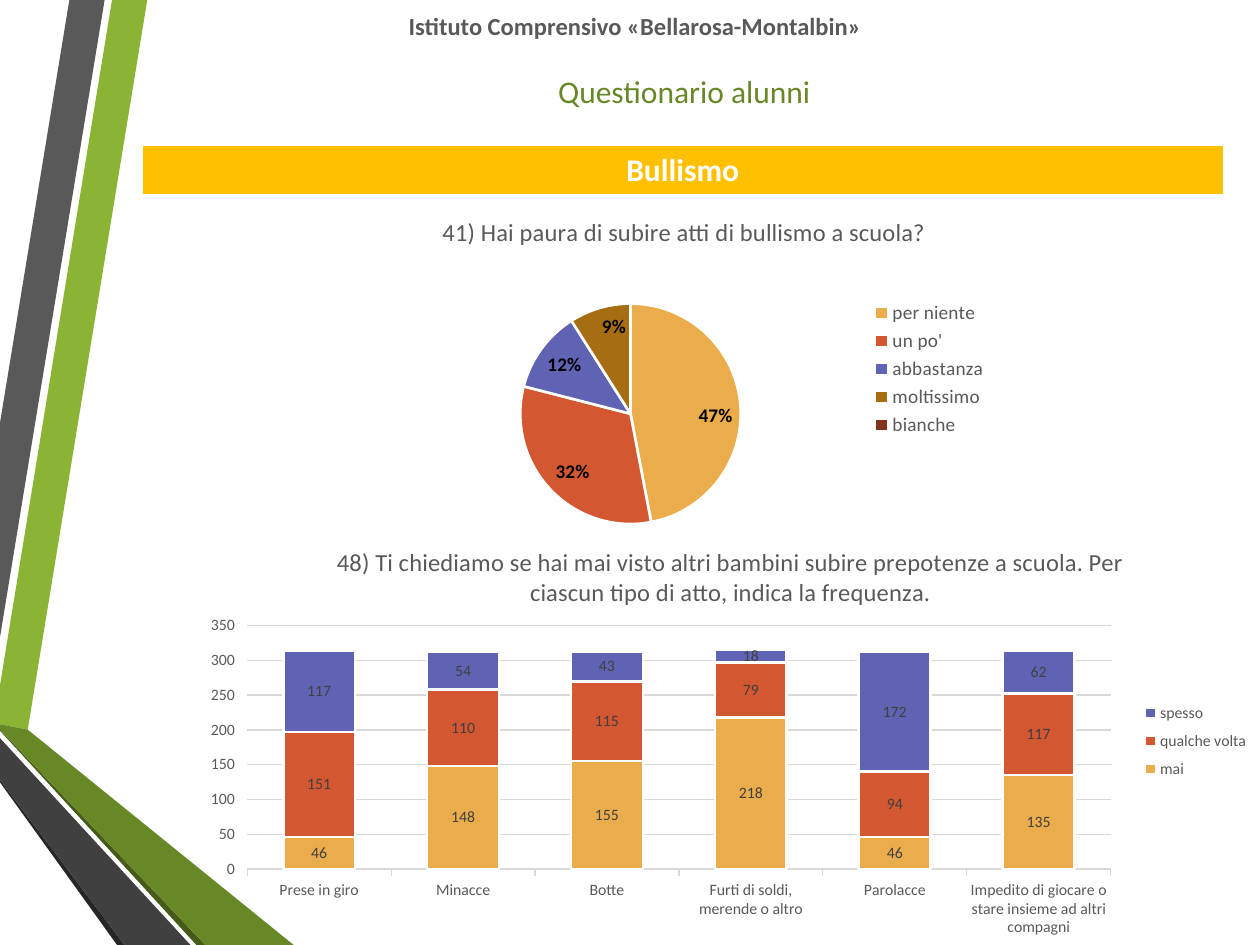
from dataclasses import dataclass

from lxml.etree import SubElement
from pptx import Presentation
from pptx.chart.data import CategoryChartData
from pptx.dml.color import RGBColor
from pptx.enum.chart import XL_CHART_TYPE, XL_LABEL_POSITION, XL_LEGEND_POSITION, XL_TICK_MARK
from pptx.enum.text import MSO_ANCHOR, PP_ALIGN
from pptx.oxml.ns import qn
from pptx.util import Cm, Pt


@dataclass(frozen=True)
class Theme:
    font: str = "Calibri"
    white: str = "FFFFFF"
    black: str = "000000"
    gray: str = "595959"
    dark_gray: str = "404040"
    near_black: str = "262626"
    grid: str = "D9D9D9"
    lime: str = "8BB434"
    green: str = "688727"
    deep_green: str = "465A1A"
    banner: str = "FFC000"
    series: tuple = ("EBAC4B", "D35731", "6063B4", "A76D13", "81331B")
    heading: int = 18
    title: int = 14
    legend: int = 11
    small: int = 9


THEME = Theme()

RIBBONS = [
    (THEME.lime, [(0, 13.82), (0, 14.6), (0.56, 14.71), (2.97, 0), (2.26, 0)]),
    (THEME.gray, [(2.11, 0), (1.4, 0), (0, 8.53), (0, 12.85)]),
    (THEME.near_black, [(0, 15.72), (0, 15.77), (2.36, 19.05), (2.51, 19.05)]),
    (THEME.deep_green, [(0, 14.71), (0, 14.73), (3.96, 19.05), (4.14, 19.05)]),
    (THEME.green, [(0, 14.71), (4.14, 19.05), (5.92, 19.05), (0.56, 14.71), (0, 14.6)]),
    (THEME.dark_gray, [(0, 15.72), (2.51, 19.05), (3.84, 19.05), (0, 14.88)]),
]

FEAR_QUESTION = "41) Hai paura di subire atti di bullismo a scuola?"
FEAR_ANSWERS = {"per niente": 47, "un po'": 32, "abbastanza": 12, "moltissimo": 9, "bianche": 0}

ACTS_QUESTION = (
    "48) Ti chiediamo se hai mai visto altri bambini subire prepotenze a scuola. "
    "Per ciascun tipo di atto, indica la frequenza."
)
ACTS = [
    "Prese in giro", "Minacce", "Botte", "Furti di soldi, merende o altro",
    "Parolacce", "Impedito di giocare o stare insieme ad altri compagni",
]
FREQUENCIES = {
    "mai": (46, 148, 155, 218, 46, 135),
    "qualche volta": (151, 110, 115, 79, 94, 117),
    "spesso": (117, 54, 43, 18, 172, 62),
}


def rgb(color):
    return RGBColor.from_string(color)


def set_font(font, size, color, bold=False):
    font.name = THEME.font
    font.size = Pt(size)
    font.bold = bold
    font.color.rgb = rgb(color)


def set_fill(fill, color):
    fill.solid()
    fill.fore_color.rgb = rgb(color)


def set_line(line, color, width):
    line.color.rgb = rgb(color)
    line.width = Pt(width)


def add_ribbon(s, color, points):
    start, *rest = [(Cm(x), Cm(y)) for x, y in points]
    builder = s.shapes.build_freeform(*start)
    builder.add_line_segments(rest, close=True)
    sp = builder.convert_to_shape()
    sp.shadow.inherit = False
    set_fill(sp.fill, color)
    sp.line.fill.background()


def write_centered(tf, text, size, color, bold=False):
    p = tf.paragraphs[0]
    p.text = text
    p.alignment = PP_ALIGN.CENTER
    set_font(p.font, size, color, bold)


def add_text(s, box, text, size, color, bold=False):
    tf = s.shapes.add_textbox(*map(Cm, box)).text_frame
    tf.word_wrap = True
    write_centered(tf, text, size, color, bold)


def add_banner(s, box, text):
    table = s.shapes.add_table(1, 1, *map(Cm, box)).table
    cell = table.cell(0, 0)
    cell.vertical_anchor = MSO_ANCHOR.MIDDLE
    write_centered(cell.text_frame, text, THEME.heading, THEME.white, True)
    tc_pr = cell._tc.get_or_add_tcPr()
    for side, width in (("L", 1), ("R", 1), ("T", 1), ("B", 3)):
        ln = SubElement(tc_pr, qn(f"a:ln{side}"), w=str(Pt(width)))
        SubElement(SubElement(ln, qn("a:solidFill")), qn("a:srgbClr"), val=THEME.white)
    set_fill(cell.fill, THEME.banner)


def place(element, x, y, w=None, h=None, inner=False):
    for old in element.findall(qn("c:layout")):
        element.remove(old)
    layout = element.makeelement(qn("c:layout"), {})
    manual = SubElement(layout, qn("c:manualLayout"))
    if inner:
        SubElement(manual, qn("c:layoutTarget"), val="inner")
    for mode in ("xMode", "yMode"):
        SubElement(manual, qn(f"c:{mode}"), val="edge")
    for name, value in zip("xywh", (x, y, w, h)):
        if value is not None:
            SubElement(manual, qn(f"c:{name}"), val=str(value))
    first = element.find(qn("c:tx"))
    if first is None:
        first = element.find(qn("c:legendPos"))
    if first is None:
        element.insert(0, layout)
    else:
        first.addnext(layout)


def add_chart(s, kind, box, title, data, legend_size, plot_area, legend_area):
    chart = s.shapes.add_chart(kind, *map(Cm, box), data).chart
    set_font(chart.font, 10, THEME.black)
    chart.has_title = True
    write_centered(chart.chart_title.text_frame, title, THEME.title, THEME.gray)
    chart.has_legend = True
    chart.legend.position = XL_LEGEND_POSITION.RIGHT
    chart.legend.include_in_layout = False
    set_font(chart.legend.font, legend_size, THEME.gray)
    place(chart.legend._element, *legend_area)
    place(chart._chartSpace.chart.plotArea, *plot_area, inner=True)
    return chart


def add_fear_pie(s):
    data = CategoryChartData()
    data.categories = list(FEAR_ANSWERS)
    data.add_series(FEAR_QUESTION, list(FEAR_ANSWERS.values()))
    chart = add_chart(s, XL_CHART_TYPE.PIE, (7.44, 3.96, 12.7, 6.96), FEAR_QUESTION, data,
                      THEME.legend, (0.24, 0.31, 0.35, 0.64), (0.79, 0.29, 0.2, 0.42))
    plot = chart.plots[0]
    plot.vary_by_categories = True
    for i, color in enumerate(THEME.series):
        fmt = plot.series[0].points[i].format
        set_fill(fmt.fill, color)
        set_line(fmt.line, THEME.white, 1.5)
    labels = plot.series[0].data_labels
    labels.show_percentage = True
    labels.show_value = False
    labels.number_format = "0%"
    labels.number_format_is_linked = False
    labels.position = XL_LABEL_POSITION.INSIDE_END
    set_font(labels.font, THEME.legend, THEME.black, True)
    last = len(FEAR_ANSWERS) - 1
    hidden = labels._element.makeelement(qn("c:dLbl"), {})
    SubElement(hidden, qn("c:idx"), val=str(last))
    SubElement(hidden, qn("c:delete"), val="1")
    labels._element.insert(0, hidden)


def add_acts_columns(s):
    data = CategoryChartData()
    data.categories = ACTS
    for name, values in FREQUENCIES.items():
        data.add_series(name, values)
    chart = add_chart(s, XL_CHART_TYPE.COLUMN_STACKED, (3.91, 10.46, 21.49, 8.61), ACTS_QUESTION,
                      data, THEME.small, (0.05, 0.25, 0.81, 0.57), (0.88, 0.41, 0.12, 0.22))
    place(chart.chart_title._element, 0.13, 0.05)
    plot = chart.plots[0]
    plot.vary_by_categories = False
    plot.gap_width = plot.overlap = 100
    for series, color in zip(plot.series, THEME.series):
        set_fill(series.format.fill, color)
        set_line(series.format.line, THEME.white, 1.5)
        series.data_labels.show_value = True
        set_font(series.data_labels.font, THEME.small, THEME.dark_gray)
    for axis in (chart.category_axis, chart.value_axis):
        set_font(axis.tick_labels.font, THEME.small, THEME.gray)
        axis.major_tick_mark = XL_TICK_MARK.OUTSIDE
    set_line(chart.category_axis.format.line, THEME.grid, 0.75)
    axis = chart.value_axis
    axis.minimum_scale, axis.maximum_scale, axis.major_unit = 0, 350, 50
    axis.format.line.fill.background()
    set_line(axis.major_gridlines.format.line, THEME.grid, 0.75)


def main():
    prs = Presentation()
    prs.slide_width, prs.slide_height = Cm(25.4), Cm(19.05)
    s = prs.slides.add_slide(prs.slide_layouts[6])
    for color, points in RIBBONS:
        add_ribbon(s, color, points)
    add_text(s, (2.9, 0.1, 19.81, 0.86), "Istituto Comprensivo «Bellarosa-Montalbin»",
             THEME.title, THEME.gray, True)
    add_text(s, (2.9, 1.32, 21.79, 1.02), "Questionario alunni", THEME.heading, THEME.green)
    add_banner(s, (2.87, 2.92, 21.79, 1.04), "Bullismo")
    add_fear_pie(s)
    add_acts_columns(s)
    prs.save("out.pptx")


if __name__ == "__main__":
    main()
